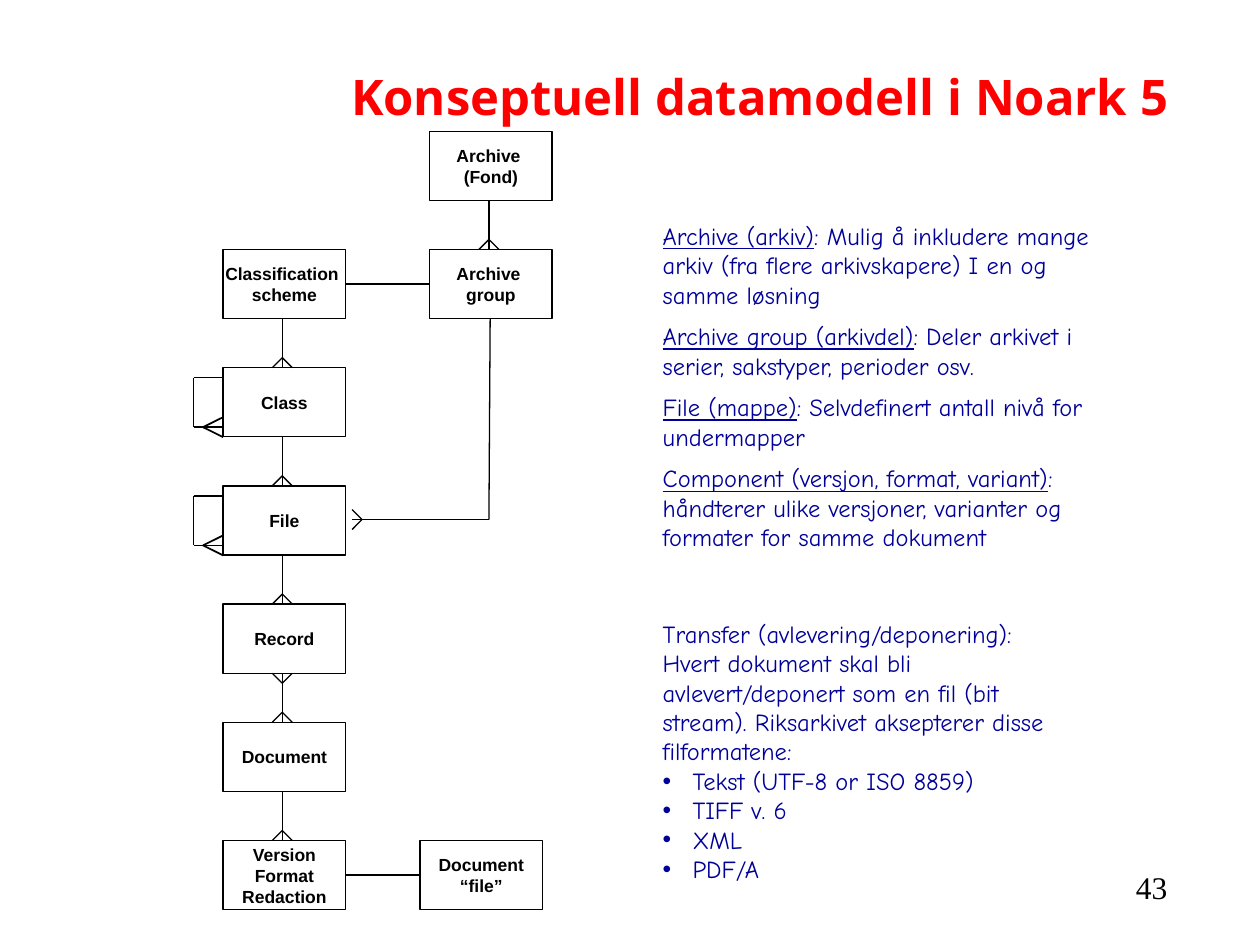
"""Build the slide on the conceptual data model in Noark 5."""
from lxml import etree
from pptx import Presentation
from pptx.dml.color import RGBColor
from pptx.enum import shapes, text
from pptx.oxml import ns
from pptx.util import Pt


def write(paragraph, words, font="Arial", size=10, color="000000", bold=False, underline=False):
    run = paragraph.add_run()
    run.text = words
    run.font.name = font
    run.font.size = Pt(size)
    run.font.color.rgb = RGBColor.from_string(color)
    run.font.bold = bold
    run.font.underline = underline


def connect(x1, y1, x2, y2, width=0.75):
    line = slide.shapes.add_connector(
        shapes.MSO_CONNECTOR.STRAIGHT, Pt(x1), Pt(y1), Pt(x2), Pt(y2))
    line.line.color.rgb = RGBColor.from_string("000000")
    line.line.width = Pt(width)
    etree.SubElement(line._element.spPr, ns.qn("a:effectLst"))


presentation = Presentation()
presentation.slide_width, presentation.slide_height = Pt(720), Pt(540)
slide = presentation.slides.add_slide(presentation.slide_layouts[3])
title, definitions, transfer = list(slide.placeholders)[:3]
number = slide.shapes.add_textbox(Pt(642), Pt(492.5), Pt(42), Pt(29))

areas = [
    (title, 36.5, 34.5, 638, 71.5),
    (definitions, 371.5, 122.5, 264, 219.5),
    (transfer, 371.5, 350, 245.5, 160),
]
for shape, left, top, width, height in areas:
    shape.left, shape.top, shape.width, shape.height = Pt(left), Pt(top), Pt(width), Pt(height)
    shape.text_frame.word_wrap = True
    shape.text_frame.auto_size = text.MSO_AUTO_SIZE.NONE
    shape.text_frame.vertical_anchor = text.MSO_ANCHOR.TOP

heading = title.text_frame.paragraphs[0]
heading.alignment = text.PP_ALIGN.RIGHT
write(heading, "Konseptuell datamodell i Noark 5", font="Open Sans", size=28, color="FF0000", bold=True)
write(number.text_frame.paragraphs[0], "43", font="Times New Roman", size=18)

body = {"font": "Comic Neue", "size": 14, "color": "000099"}
terms = [
    ("Archive (arkiv)", ": Mulig å inkludere mange arkiv (fra flere arkivskapere) I en og samme løsning"),
    ("Archive group (arkivdel)", ": Deler arkivet i serier, sakstyper, perioder osv."),
    ("File (mappe)", ": Selvdefinert antall nivå for undermapper"),
    ("Component (versjon, format, variant)",
     ": håndterer ulike versjoner, varianter og formater for samme dokument"),
]
for index, (term, meaning) in enumerate(terms):
    frame = definitions.text_frame
    paragraph = frame.add_paragraph() if index else frame.paragraphs[0]
    properties = paragraph._p.get_or_add_pPr()
    properties.set("marL", "0")
    properties.set("indent", "0")
    etree.SubElement(properties, ns.qn("a:buNone"))
    paragraph.space_before = Pt(7 if index else 0)
    write(paragraph, term, underline=True, **body)
    write(paragraph, meaning, **body)

transfer_lines = [
    "Transfer (avlevering/deponering): Hvert dokument skal bli avlevert/deponert som en fil "
    "(bit stream). Riksarkivet aksepterer disse filformatene:",
    "Tekst (UTF-8 or ISO 8859)", "TIFF v. 6", "XML", "PDF/A",
]
for index, words in enumerate(transfer_lines):
    frame = transfer.text_frame
    paragraph = frame.add_paragraph() if index else frame.paragraphs[0]
    properties = paragraph._p.get_or_add_pPr()
    indent = Pt(17) if index else 0
    properties.set("marL", str(indent))
    properties.set("indent", str(-indent))
    if index:
        etree.SubElement(properties, ns.qn("a:buFont"), typeface="Arial")
        etree.SubElement(properties, ns.qn("a:buChar"), char="•")
    else:
        etree.SubElement(properties, ns.qn("a:buNone"))
    paragraph.space_before = Pt(0)
    write(paragraph, words, **body)

box_width, box_height, foot = 70, 39.5, 5.7
main_left, group_left, file_left = 127.5, 245.5, 240
main_axis, group_axis = 161.3, 279.4
row_tops = [75 + 67.55 * row for row in range(7)]

entities = [
    (group_left, 0, ["Archive ", "(Fond)"]),
    (group_left, 1, ["Archive ", "group"]),
    (main_left, 1, ["Classification ", "scheme"]),
    (main_left, 2, ["Class"]),
    (main_left, 3, ["File"]),
    (main_left, 4, ["Record"]),
    (main_left, 5, ["Document"]),
    (main_left, 6, ["Version", "Format", "Redaction"]),
    (file_left, 6, ["Document", "“file”"]),
]
for left, row, lines in entities:
    entity = slide.shapes.add_shape(
        shapes.MSO_SHAPE.RECTANGLE, Pt(left), Pt(row_tops[row]), Pt(box_width), Pt(box_height))
    entity.shadow.inherit = False
    entity.fill.solid()
    entity.fill.fore_color.rgb = RGBColor.from_string("FFFFFF")
    entity.line.color.rgb = RGBColor.from_string("000000")
    entity.line.width = Pt(0.75)
    frame = entity.text_frame
    frame.word_wrap = False
    frame.vertical_anchor = text.MSO_ANCHOR.MIDDLE
    for index, words in enumerate(lines):
        paragraph = frame.add_paragraph() if index else frame.paragraphs[0]
        paragraph.alignment = text.PP_ALIGN.CENTER
        write(paragraph, words, bold=True)

for axis, row in [(group_axis, 0)] + [(main_axis, row) for row in range(1, 6)]:
    bottom, below = row_tops[row] + box_height, row_tops[row + 1]
    connect(axis, bottom, axis, below)
    for side in (-foot, foot):
        connect(axis, below - foot, axis + side, below)
        if row == 4:
            connect(axis, bottom + foot, axis + side, bottom)

for row, right in [(1, group_left), (6, file_left)]:
    middle = row_tops[row] + box_height / 2
    connect(main_left + box_width, middle, right, middle)

file_end, file_middle = 201.2, row_tops[3] + box_height / 2 - 0.5
connect(group_axis + 0.7, row_tops[1] + box_height, group_axis, file_middle)
connect(group_axis, file_middle, file_end, file_middle)
for side in (-foot, foot):
    connect(file_end + foot, file_middle, file_end, file_middle + side)

loop_left, loop_tip = 110.6, 116
for row in (2, 3):
    upper, lower = row_tops[row] + 5.7, row_tops[row] + 34
    connect(loop_left, upper, loop_left, lower, width=1)
    for level in (upper, lower):
        connect(loop_left, level, main_left, level, width=1)
    for side in (-foot, foot):
        connect(loop_tip, lower, main_left, lower + side, width=1)

presentation.save("out.pptx")
